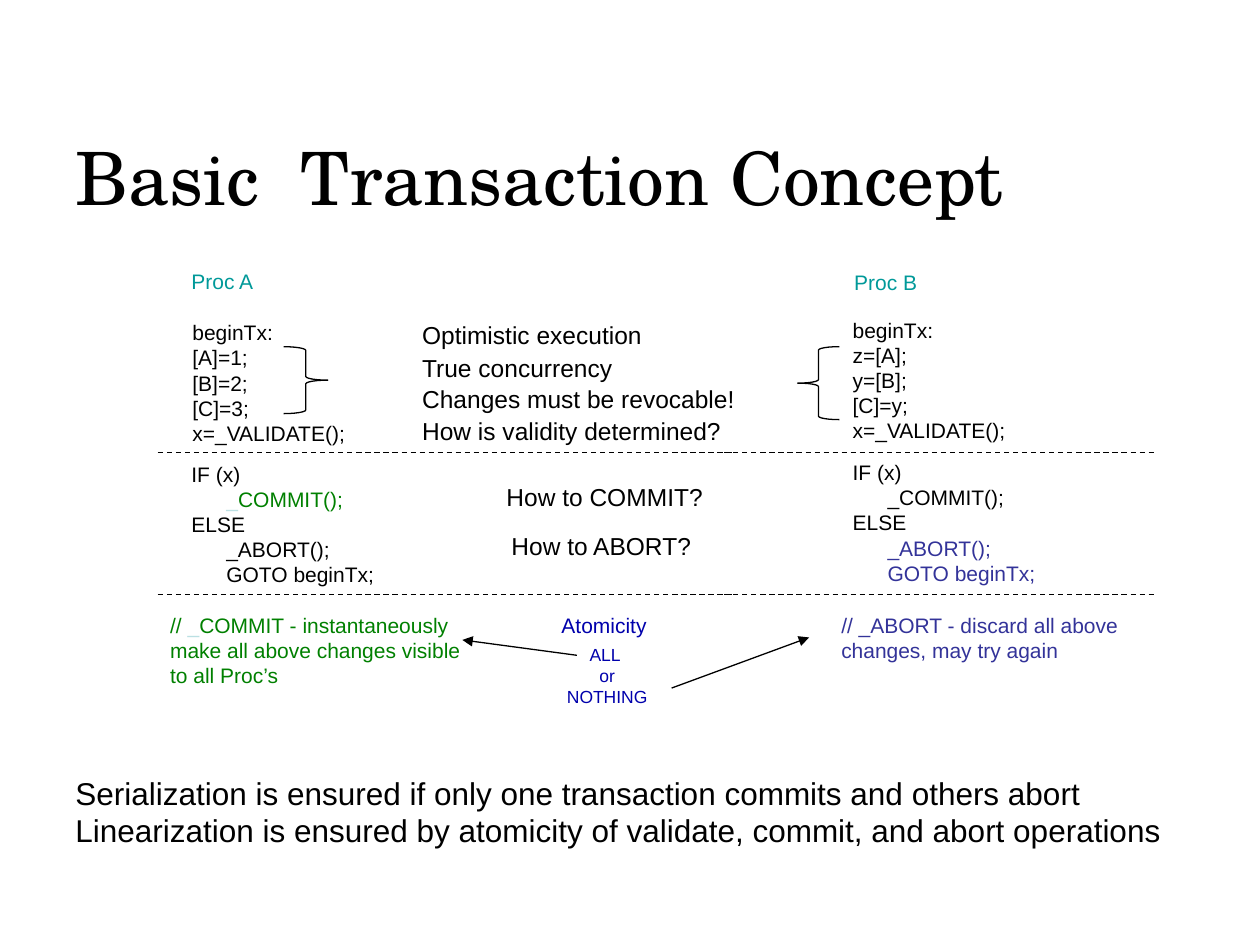
from lxml.etree import SubElement
from pptx import Presentation
from pptx.dml.color import RGBColor
from pptx.enum.dml import MSO_LINE_DASH_STYLE as Dash
from pptx.enum.shapes import MSO_CONNECTOR as Link, MSO_SHAPE as Shape
from pptx.enum.text import MSO_ANCHOR as Anchor, MSO_AUTO_SIZE as Fit, PP_ALIGN as Align
from pptx.oxml.ns import qn
from pptx.util import Cm, Pt

BLACK, WHITE, TEAL, BLUE = "000000", "FFFFFF", "009999", "0000AC"
GREEN, PALE, INDIGO = "008000", "BBE0E3", "333399"
TITLE = "Basic  Transaction Concept"

CODE = [
    (3.63, 6.32, 6.55, 2.82, BLACK,
     ["beginTx:", "[A]=1;", "[B]=2;", "[C]=3;", "x=_VALIDATE();"]),
    (16.94, 6.27, 6.15, 2.82, BLACK,
     ["beginTx:", "z=[A];", "y=[B];", "[C]=y;", "x=_VALIDATE();"]),
    (3.61, 9.17, 10.8, 2.82, BLACK,
     ["IF (x)", [("      _", PALE), ("COMMIT();", GREEN)], "ELSE",
      "      _ABORT();", "      GOTO beginTx;"]),
    (16.94, 9.14, 7.62, 2.82, BLACK,
     ["IF (x)", "      _COMMIT();", "ELSE",
      [("      _ABORT();", INDIGO)], [("      GOTO beginTx;", INDIGO)]]),
]
LABELS = [
    (3.61, 5.28, 2.2, 0.76, TEAL, ["Proc A"]),
    (16.97, 5.31, 2.2, 0.76, TEAL, ["Proc B"]),
    (11.07, 12.22, 2.8, 0.76, BLUE, ["Atomicity"]),
    (3.18, 12.22, 6.55, 2.31, GREEN,
     [[("//", GREEN), (" _", PALE),
       ("COMMIT - instantaneously make all above changes visible to all Proc’s", GREEN)]]),
    (16.71, 12.22, 6.15, 1.8, INDIGO,
     ["// _ABORT - discard all above changes, may try again"]),
]
QUESTIONS = [
    (8.26, 6.32, "Optimistic execution"),
    (8.26, 6.99, "True concurrency"),
    (8.26, 7.62, "Changes must be revocable!"),
    (8.26, 8.26, "How is validity determined?"),
    (9.96, 9.6, "How to COMMIT?"),
    (10.06, 10.59, "How to ABORT?"),
]
ATOMIC = (11.07, 12.85, 2.34, 1.96, BLUE, ["ALL ", "or NOTHING"])
SUMMARY = (1.27, 15.47, 23.29, 1.8, BLACK, [
    "Serialization is ensured if only one transaction commits and others abort",
    "Linearization is ensured by atomicity of validate, commit, and abort operations"])
BRACES = [
    (Shape.RIGHT_BRACE, 5.72, 6.99, 0.89, 1.35),
    (Shape.LEFT_BRACE, 16.08, 6.99, 0.84, 1.47),
]
DIVIDER_ROWS = [9.12, 11.99]
DIVIDER_SPANS = [(3.18, 14.81), (14.6, 23.29)]
ARROWS = [(11.63, 13.21, 9.32, 12.9), (13.54, 13.87, 16.31, 12.85)]


def color(value):
    return RGBColor.from_string(value)


def style(span, size, tint, face="Arial"):
    span.font.name, span.font.size = face, Pt(size)
    span.font.color.rgb = color(tint)


def add_text(page, left, top, width, height, tint, lines, size=12, align=Align.LEFT):
    box = page.shapes.add_textbox(Cm(left), Cm(top), Cm(width), Cm(height))
    frame = box.text_frame
    frame.word_wrap = True
    for index, line in enumerate(lines):
        para = frame.add_paragraph() if index else frame.paragraphs[0]
        para.alignment = align
        for text, shade in [(line, tint)] if isinstance(line, str) else line:
            span = para.add_run()
            span.text = text
            style(span, size, shade)


def add_line(page, *ends):
    line = page.shapes.add_connector(Link.STRAIGHT, *map(Cm, ends))
    line.line.color.rgb = color(BLACK)
    line.line.width = Pt(0.75)
    SubElement(line._element.spPr, qn("a:effectLst"))
    return line


def add_title(page):
    title = page.shapes.title
    title.left, title.top, title.width, title.height = map(Cm, (1.27, 2.74, 20.12, 1.85))
    frame = title.text_frame
    frame.text = TITLE
    frame.auto_size, frame.vertical_anchor = Fit.NONE, Anchor.MIDDLE
    para = frame.paragraphs[0]
    para.alignment, para.line_spacing = Align.LEFT, 0.9
    style(para.runs[0], 42, BLACK, "TeX Gyre Schola")


def main():
    """Build the transaction concept slide."""
    deck = Presentation()
    deck.slide_width, deck.slide_height = Cm(25.4), Cm(19.05)
    page = deck.slides.add_slide(deck.slide_layouts[5])
    add_title(page)
    for row in DIVIDER_ROWS:
        for start, end in DIVIDER_SPANS:
            add_line(page, start, row, end, row).line.dash_style = Dash.DASH
    for item in CODE + LABELS:
        add_text(page, *item)
    for kind, *place in BRACES:
        brace = page.shapes.add_shape(kind, *map(Cm, place))
        brace.shadow.inherit = False
        brace.fill.solid()
        brace.fill.fore_color.rgb = color(WHITE)
        brace.line.color.rgb = color(BLACK)
        brace.line.width = Pt(0.75)
    for left, top, text in QUESTIONS:
        add_text(page, left, top, 7.67, 0.86, BLACK, [text], 14)
    add_text(page, *ATOMIC, size=10, align=Align.CENTER)
    add_text(page, *SUMMARY, size=18)
    for ends in ARROWS:
        arrow = add_line(page, *ends)
        SubElement(arrow.line._get_or_add_ln(), qn("a:tailEnd"), type="triangle")
    deck.save("out.pptx")


if __name__ == "__main__":
    main()
